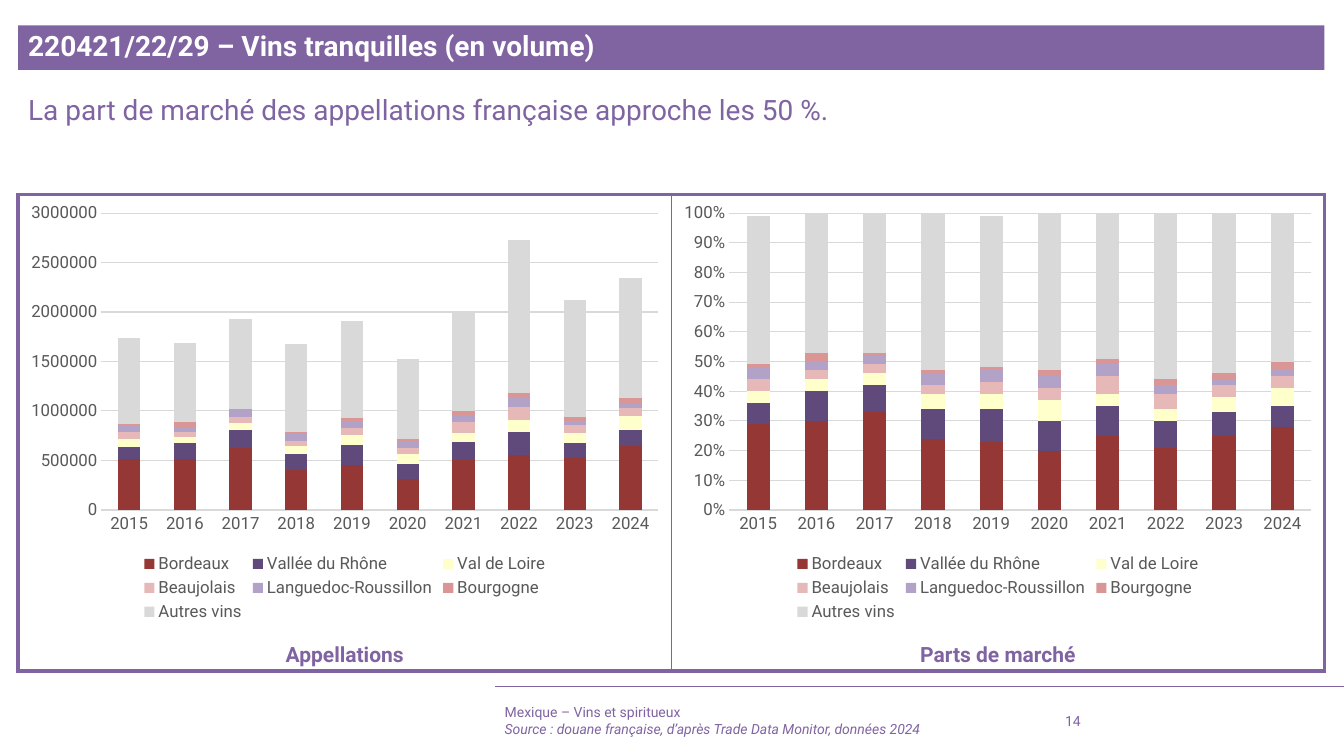
import pptx
import pptx.chart.data
import pptx.dml.color
import pptx.enum.chart
import pptx.enum.shapes
import pptx.enum.text
import pptx.oxml
import pptx.oxml.ns
import pptx.util
from lxml import etree

Cm = pptx.util.Cm
Pt = pptx.util.Pt
RGBColor = pptx.dml.color.RGBColor
ALIGN = pptx.enum.text.PP_ALIGN
ANCHOR = pptx.enum.text.MSO_ANCHOR
qn = pptx.oxml.ns.qn

FONT = "Roboto"
PURPLE = RGBColor(0x80, 0x64, 0xA2)
WHITE = RGBColor(0xFF, 0xFF, 0xFF)
BLACK = RGBColor(0x00, 0x00, 0x00)
GRAY = RGBColor(0x59, 0x59, 0x59)
LIGHT = RGBColor(0xD9, 0xD9, 0xD9)

LEFT, TOP = 0.46, 4.9
PANEL_W, PANEL_H = 16.46, 12.01
CHART_H = 10.87
FOOTER_LEFT, FOOTER_TOP, FOOTER_H = 12.47, 17.65, 1.02

YEARS = [str(year) for year in range(2015, 2025)]
REGIONS = {
    "Bordeaux": RGBColor(0x95, 0x37, 0x35),
    "Vallée du Rhône": RGBColor(0x60, 0x4A, 0x7B),
    "Val de Loire": RGBColor(0xFF, 0xFF, 0xCC),
    "Beaujolais": RGBColor(0xE6, 0xB9, 0xB8),
    "Languedoc-Roussillon": RGBColor(0xB3, 0xA2, 0xC7),
    "Bourgogne": RGBColor(0xD9, 0x96, 0x94),
    "Autres vins": LIGHT,
}
VOLUMES_THOUSANDS = [
    [510, 510, 630, 400, 450, 310, 500, 560, 520, 650],
    [130, 170, 180, 170, 210, 150, 190, 230, 160, 160],
    [80, 60, 70, 80, 100, 110, 90, 120, 100, 140],
    [70, 50, 60, 50, 70, 60, 110, 130, 80, 80],
    [70, 50, 70, 70, 70, 60, 70, 90, 40, 40],
    [10, 50, 10, 20, 30, 30, 40, 50, 40, 60],
    [870, 800, 910, 890, 980, 810, 1000, 1550, 1180, 1210],
]
SHARES_PERCENT = [
    [29, 30, 33, 24, 23, 20, 25, 21, 25, 28],
    [7, 10, 9, 10, 11, 10, 10, 9, 8, 7],
    [4, 4, 4, 5, 5, 7, 4, 4, 5, 6],
    [4, 3, 3, 3, 4, 4, 6, 5, 4, 4],
    [4, 3, 3, 4, 4, 4, 4, 3, 2, 2],
    [1, 3, 1, 1, 1, 2, 2, 2, 2, 3],
    [50, 47, 47, 53, 51, 53, 50, 57, 55, 52],
]


def set_font(font, size, color, bold=False, italic=False):
    font.name = FONT
    font.size = Pt(size)
    font.color.rgb = color
    font.bold = bold
    font.italic = italic


def write(tf, text, size=10, color=PURPLE, bold=False, italic=False,
          align=ALIGN.LEFT, spacing=None, anchor=ANCHOR.TOP):
    tf.word_wrap = True
    tf.vertical_anchor = anchor
    p = tf.add_paragraph() if tf.text else tf.paragraphs[0]
    p.alignment = align
    p.line_spacing = spacing
    r = p.add_run()
    r.text = text
    set_font(r.font, size, color, bold, italic)


def add_box(s, left, top, width, height):
    return s.shapes.add_textbox(Cm(left), Cm(top), Cm(width), Cm(height)).text_frame


def add_banner(s, text):
    sp = s.shapes.add_shape(pptx.enum.shapes.MSO_SHAPE.RECTANGLE,
                            Cm(LEFT), Cm(0.64), Cm(2 * PANEL_W), Cm(1.12))
    sp.shadow.inherit = False
    sp.fill.solid()
    sp.fill.fore_color.rgb = PURPLE
    sp.line.fill.background()
    write(sp.text_frame, text, size=20, color=WHITE, bold=True,
          spacing=0.9, anchor=ANCHOR.MIDDLE)


def add_rule(s):
    line = s.shapes.add_connector(pptx.enum.shapes.MSO_CONNECTOR.STRAIGHT,
                                  Cm(33.87), Cm(17.3), Cm(FOOTER_LEFT), Cm(17.3))
    line.line.color.rgb = PURPLE
    line.line.width = Pt(0.5)
    etree.SubElement(line._element.spPr, qn("a:effectLst"))


def set_borders(cell, **widths):
    tcPr = cell._tc.get_or_add_tcPr()
    for i, side in enumerate("LRTB"):
        ln = pptx.oxml.parse_xml(
            f'<a:ln{side} xmlns:a="http://schemas.openxmlformats.org/drawingml/2006/main" '
            f'w="{Pt(widths.get(side, 3))}"><a:solidFill><a:srgbClr val="{PURPLE}"/>'
            f'</a:solidFill></a:ln{side}>')
        tcPr.insert(i, ln)


def add_frame(s):
    table = s.shapes.add_table(1, 2, Cm(LEFT), Cm(TOP),
                               Cm(2 * PANEL_W), Cm(PANEL_H)).table
    table.first_row = table.horz_banding = False
    for cell, inner_side in zip(table.rows[0].cells, "RL"):
        cell.fill.background()
        set_borders(cell, **{inner_side: 1})


def add_stacked_chart(s, left, rows, number_format, maximum, unit):
    data = pptx.chart.data.CategoryChartData()
    data.categories = YEARS
    for region, values in zip(REGIONS, rows):
        data.add_series(region, values)
    chart = s.shapes.add_chart(pptx.enum.chart.XL_CHART_TYPE.COLUMN_STACKED,
                               Cm(left), Cm(TOP), Cm(PANEL_W), Cm(CHART_H), data).chart
    set_font(chart.font, 12, BLACK)
    chart.has_title = False
    chart.has_legend = True
    chart.legend.position = pptx.enum.chart.XL_LEGEND_POSITION.BOTTOM
    chart.legend.include_in_layout = False
    set_font(chart.legend.font, 12, GRAY)

    plot = chart.plots[0]
    plot.gap_width = 150
    plot.overlap = 100
    plot.vary_by_categories = False
    for series, color in zip(plot.series, REGIONS.values()):
        series.format.fill.solid()
        series.format.fill.fore_color.rgb = color
        series.invert_if_negative = False

    years, scale = chart.category_axis, chart.value_axis
    for axis in (years, scale):
        axis.major_tick_mark = axis.minor_tick_mark = pptx.enum.chart.XL_TICK_MARK.NONE
        set_font(axis.tick_labels.font, 12, GRAY)
    scale.minimum_scale, scale.maximum_scale, scale.major_unit = 0, maximum, unit
    scale.tick_labels.number_format = number_format
    scale.tick_labels.number_format_is_linked = False
    scale.format.line.fill.background()
    for line in (years.format.line, scale.major_gridlines.format.line):
        line.color.rgb = LIGHT
        line.width = Pt(0.75)


def add_caption(s, left, text):
    tf = add_box(s, left, 16.03, PANEL_W, 0.89)
    write(tf, text, size=15, bold=True, align=ALIGN.CENTER)
    tf.auto_size = pptx.enum.text.MSO_AUTO_SIZE.SHAPE_TO_FIT_TEXT


def add_footer(s):
    tf = add_box(s, FOOTER_LEFT, FOOTER_TOP, 13.79, FOOTER_H)
    write(tf, "Mexique – Vins et spiritueux", anchor=ANCHOR.MIDDLE)
    write(tf, "Source : douane française, d’après Trade Data Monitor, données 2024",
          italic=True, anchor=ANCHOR.MIDDLE)
    write(add_box(s, 26.59, FOOTER_TOP, 2.51, FOOTER_H), "14", anchor=ANCHOR.MIDDLE)


def main():
    prs = pptx.Presentation()
    prs.slide_width, prs.slide_height = Cm(33.87), Cm(19.05)
    s = prs.slides.add_slide(prs.slide_layouts[6])
    add_rule(s)
    add_frame(s)
    add_footer(s)
    add_banner(s, "220421/22/29 – Vins tranquilles (en volume)")
    write(add_box(s, LEFT, 2.29, 2 * PANEL_W, 2.06),
          "La part de marché des appellations française approche les 50 %.",
          size=20, align=ALIGN.JUSTIFY, spacing=0.9)
    volumes = [[v * 1000 for v in row] for row in VOLUMES_THOUSANDS]
    shares = [[v / 100 for v in row] for row in SHARES_PERCENT]
    panels = [
        ("Appellations", volumes, "General", 3000000, 500000),
        ("Parts de marché", shares, "0%", 1, 0.1),
    ]
    for i, (caption, *chart_settings) in enumerate(panels):
        left = LEFT + i * PANEL_W
        add_stacked_chart(s, left, *chart_settings)
        add_caption(s, left, caption)
    prs.save("out.pptx")


if __name__ == "__main__":
    main()
